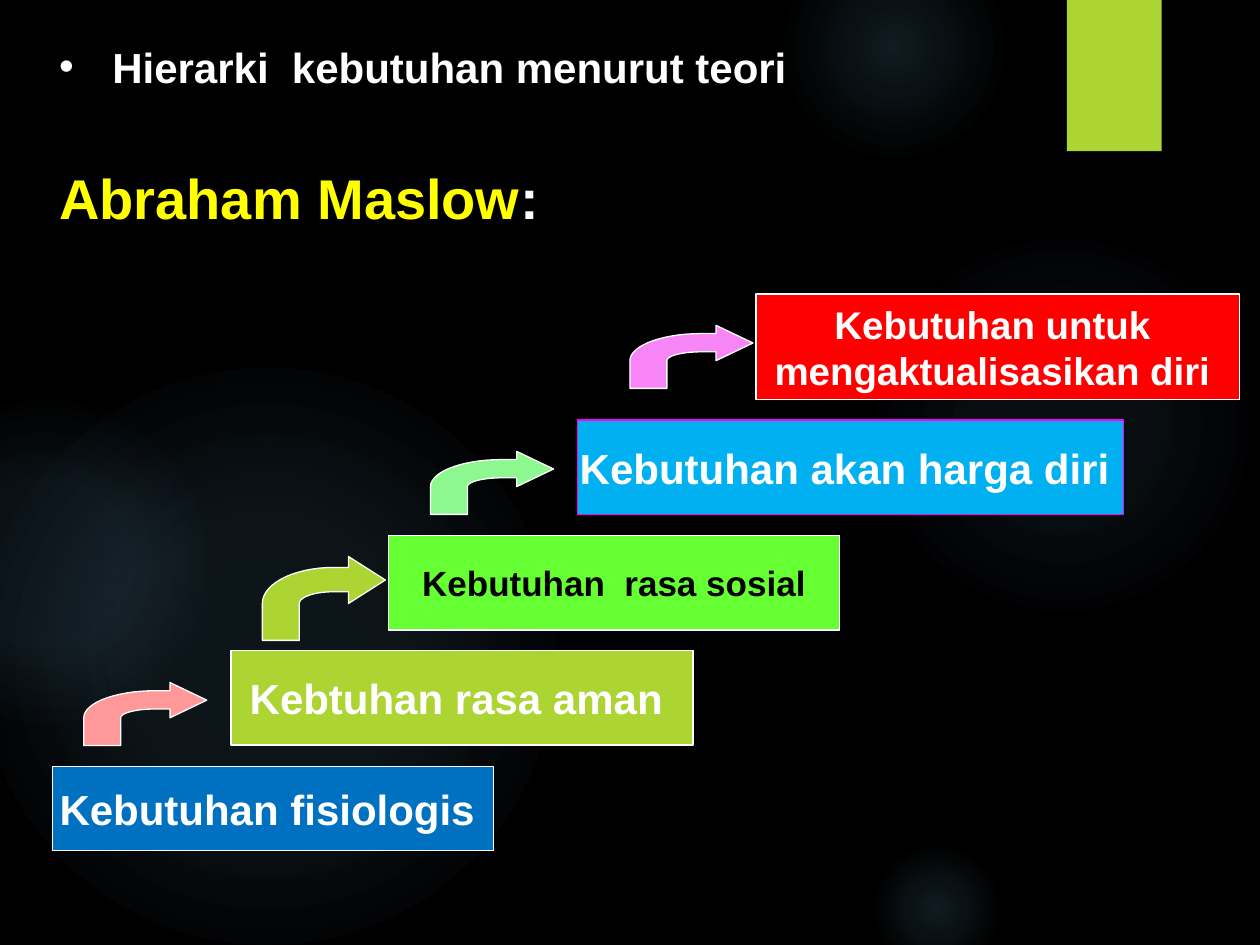
from math import cos, radians, sin

from lxml.etree import SubElement
from pptx import Presentation
from pptx.dml.color import RGBColor
from pptx.enum.shapes import MSO_SHAPE as Preset
from pptx.enum.text import MSO_ANCHOR as Anchor, MSO_AUTO_SIZE as AutoSize, PP_ALIGN as Align
from pptx.oxml import parse_xml
from pptx.oxml.ns import nsdecls, qn
from pptx.util import Cm, Pt

WHITE = "FFFFFF"
LIME = "ACD433"
GLOW = "7AC4F0"

# left, top, diameter, (position, opacity) stops in percent
GLOWS = [
    (17.5, 4.65, 7.82, [(0, 7), (36, 6), (69, 0)]),
    (15.8, -1.27, 4.45, [(0, 14), (36, 7), (73, 0)]),
    (17.5, 16.94, 2.74, [(0, 14), (36, 7), (66, 0)]),
    (-0.43, 7.42, 11.63, [(0, 11), (36, 10), (75, 0)]),
    (-2.34, 8.05, 6.55, [(0, 8), (36, 8), (72, 0)]),
]
NEEDS = [
    ((15.24, 5.93, 9.75, 2.12), "FF0000", WHITE, 22, WHITE,
     ["Kebutuhan untuk ", "mengaktualisasikan diri "]),
    ((1.06, 15.45, 8.89, 1.69), "0070C0", WHITE, 24, WHITE, ["Kebutuhan fisiologis "]),
    ((4.66, 13.12, 9.31, 1.9), LIME, WHITE, 24, WHITE, ["Kebtuhan rasa aman "]),
    ((7.83, 10.8, 9.1, 1.9), "66FF33", WHITE, 20, "000000", ["Kebutuhan  rasa sosial"]),
    ((11.64, 8.47, 11.01, 1.9), "00B0F0", "FF00FF", 24, WHITE, ["Kebutuhan akan harga diri "]),
]
ARROWS = [
    ((1.69, 13.76, 2.48, 1.27), "FF9999"),
    ((12.7, 6.56, 2.48, 1.27), "F785F7"),
    ((8.68, 9.1, 2.48, 1.27), "8DF790"),
    ((5.29, 11.22, 2.48, 1.69), LIME),
]


def color(value):
    """Return the colour for a hex string."""
    return RGBColor.from_string(value)


def set_font(font, size, value):
    """Apply the bold Arial style to a font."""
    for name, setting in {"name": "Arial", "size": Pt(size), "bold": True}.items():
        setattr(font, name, setting)
    font.color.rgb = color(value)


def style_shape(shape, fill, line=None):
    """Give a shape a plain fill, an optional outline and no shadow."""
    shape.shadow.inherit = False
    shape.fill.solid()
    shape.fill.fore_color.rgb = color(fill)
    if line:
        shape.line.color.rgb = color(line)
        shape.line.width = Pt(0.75)
    else:
        shape.line.fill.background()


def add_preset(slide, preset, box, fill, line=None):
    """Add a styled preset shape at a box in centimetres."""
    shape = slide.shapes.add_shape(preset, *map(Cm, box))
    style_shape(shape, fill, line)
    return shape


def add_glow(slide, left, top, diameter, stops):
    """Add a circle that fades out from its centre."""
    circle = add_preset(slide, Preset.OVAL, (left, top, diameter, diameter), GLOW)
    stop_xml = "".join(
        f'<a:gs pos="{position * 1000}"><a:srgbClr val="{GLOW}">'
        f'<a:alpha val="{opacity * 1000}"/></a:srgbClr></a:gs>'
        for position, opacity in stops)
    gradient = parse_xml(
        f'<a:gradFill {nsdecls("a")} rotWithShape="1"><a:gsLst>{stop_xml}</a:gsLst>'
        '<a:path path="circle"><a:fillToRect l="50000" t="50000" r="50000" b="50000"/>'
        '</a:path></a:gradFill>')
    properties = circle.element.spPr
    properties.replace(properties.find(qn("a:solidFill")), gradient)


def add_need(slide, box, fill, line, size, text_color, lines):
    """Add one step of the hierarchy with centred text."""
    frame = add_preset(slide, Preset.RECTANGLE, box, fill, line).text_frame
    frame.word_wrap = False
    frame.vertical_anchor = Anchor.MIDDLE
    frame.text = "\n".join(lines)
    for paragraph in frame.paragraphs:
        paragraph.alignment = Align.CENTER
        set_font(paragraph.runs[0].font, size, text_color)


def bend(radius_x, radius_y, angles):
    """Return points on the arrow's elliptical bend as fractions of its box."""
    return [(0.58 - radius_x * cos(radians(angle)), 0.56 - radius_y * sin(radians(angle)))
            for angle in angles]


def add_arrow(slide, box, fill):
    """Add a bent arrow that rises and points right."""
    left, top, width, height = map(Cm, box)
    outline = [(1, 0.28), (0.7, 0), (0.7, 0.13), *bend(0.58, 0.43, range(90, -1, -6)),
               (0, 1), (0.3, 1), *bend(0.28, 0.14, range(0, 91, 6)), (0.7, 0.42), (0.7, 0.56)]
    points = [(left + x * width, top + y * height) for x, y in outline]
    builder = slide.shapes.build_freeform(*points[0])
    builder.add_line_segments(points[1:], close=True)
    style_shape(builder.convert_to_shape(), fill, WHITE)


def add_title(slide):
    """Fill the title placeholder with the bulleted heading and the name."""
    title = slide.shapes.title
    slide.shapes.element.append(title.element)
    box = {"left": 0.84, "top": 0.7, "width": 16.71, "height": 3.99}
    for name, value in box.items():
        setattr(title, name, Cm(value))
    frame = title.text_frame
    settings = {"word_wrap": True, "auto_size": AutoSize.NONE, "vertical_anchor": Anchor.TOP}
    for name, value in settings.items():
        setattr(frame, name, value)
    heading, theorist = frame.paragraphs[0], frame.add_paragraph()
    for paragraph, bullet in ((heading, "•"), (theorist, None)):
        paragraph.alignment = Align.LEFT
        properties = paragraph._p.get_or_add_pPr()
        properties.set("marL", str(Cm(1.17)))
        properties.set("indent", str(Cm(-1.07)))
        if bullet:
            SubElement(properties, qn("a:buFont")).set("typeface", "Arial")
            SubElement(properties, qn("a:buChar")).set("char", bullet)
        else:
            SubElement(properties, qn("a:buNone"))
    theorist.space_before = Pt(41)
    for paragraph, text, size, value in (
            (heading, "Hierarki  kebutuhan menurut teori", 24, WHITE),
            (theorist, "Abraham Maslow", 32, "FFFF00"),
            (theorist, ":", 32, WHITE)):
        run = paragraph.add_run()
        run.text = text
        set_font(run.font, size, value)


def main():
    """Build the slide and save it."""
    presentation = Presentation()
    presentation.slide_width, presentation.slide_height = Cm(25.4), Cm(19.05)
    slide = presentation.slides.add_slide(presentation.slide_layouts[5])
    slide.background.fill.solid()
    slide.background.fill.fore_color.rgb = color("000000")
    for glow in GLOWS:
        add_glow(slide, *glow)
    add_preset(slide, Preset.RECTANGLE, (21.51, 0, 1.91, 3.05), LIME)
    for need in NEEDS:
        add_need(slide, *need)
    for arrow in ARROWS:
        add_arrow(slide, *arrow)
    add_title(slide)
    presentation.save("out.pptx")


if __name__ == "__main__":
    main()
